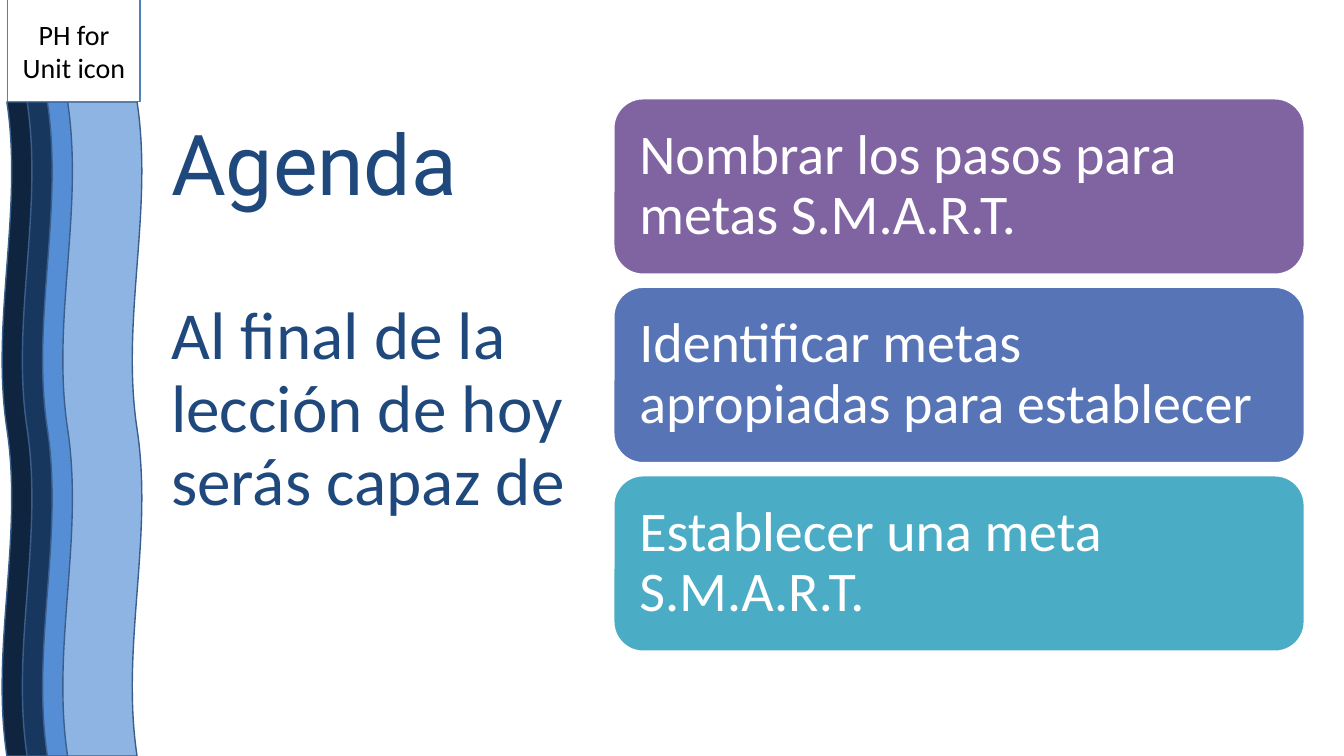
from pptx import Presentation
from pptx.dml.color import RGBColor
from pptx.enum.shapes import MSO_SHAPE as Preset
from pptx.enum.text import MSO_ANCHOR as Anchor, MSO_AUTO_SIZE as AutoSize, PP_ALIGN as Align
from pptx.util import Cm, Pt

TITLE = "Agenda"
SUBTITLE = "Al final de la lección de hoy serás capaz de"
ICON_LABEL = "PH for Unit icon"
GOALS = [
    ("Nombrar los pasos para metas S.M.A.R.T.", "purple"),
    ("Identificar metas apropiadas para establecer", "indigo"),
    ("Establecer una meta S.M.A.R.T.", "teal"),
]
WAVES = ["midnight", "navy", "sky", "pale"]
COLORS = {
    "midnight": "0F243E", "navy": "17375E", "sky": "558ED5", "pale": "8EB4E3",
    "wave_edge": "3A5F8C", "icon_edge": "4F81BD", "heading": "1F497D",
    "purple": "8064A2", "indigo": "5674B6", "teal": "4BACC6",
    "white": "FFFFFF", "black": "000000",
}

# Lengths in centimetres
WAVE_LENGTH, WAVE_WIDTH, WAVE_STEP = 16.48, 2.0, 0.51
WAVE_CENTER_X, WAVE_CENTER_Y = 1.05, 10.81
GOAL_LEFT, GOAL_TOP, GOAL_WIDTH, GOAL_HEIGHT = 15.47, 2.49, 17.4, 4.42
GOAL_STEP = 4.75
GOAL_INSET = 0.43


def color(name):
    return RGBColor.from_string(COLORS[name])


def add_box(page, preset, place, fill, edge, edge_width):
    box = page.shapes.add_shape(preset, *map(Cm, place))
    box.shadow.inherit = False
    if fill:
        box.fill.solid()
        box.fill.fore_color.rgb = color(fill)
    else:
        box.fill.background()
    box.line.color.rgb = color(edge)
    box.line.width = Pt(edge_width)
    return box


def write(para, text, font_name, size, ink, align=Align.LEFT, spacing=0.9):
    para.text = text
    para.alignment = align
    para.line_spacing = spacing
    font = para.font
    font.name, font.size = font_name, Pt(size)
    font.color.rgb = color(ink)


def add_sidebar(page):
    for index, fill in enumerate(WAVES):
        left = WAVE_CENTER_X + index * WAVE_STEP - WAVE_LENGTH / 2
        top = WAVE_CENTER_Y - WAVE_WIDTH / 2
        wave = add_box(page, Preset.DOUBLE_WAVE, (left, top, WAVE_LENGTH, WAVE_WIDTH),
                       fill, "wave_edge", 1)
        wave.rotation = 270

    icon = add_box(page, Preset.RECTANGLE, (0.2, 0, 3.33, 2.57), None, "icon_edge", 0.75)
    frame = icon.text_frame
    frame.word_wrap = True
    frame.vertical_anchor = Anchor.MIDDLE
    write(frame.paragraphs[0], ICON_LABEL, "Calibri", 20, "black", Align.CENTER, 1.0)


def fill_title(page):
    title = page.shapes.title
    title.left, title.top, title.width, title.height = map(Cm, (4.06, 2.97, 10.57, 14.05))
    frame = title.text_frame
    frame.word_wrap = True
    frame.auto_size = AutoSize.NONE
    frame.vertical_anchor = Anchor.TOP
    write(frame.paragraphs[0], TITLE, "Roboto", 60, "heading")
    subtitle = frame.add_paragraph()
    write(subtitle, SUBTITLE, "Calibri", 48, "heading")
    subtitle.space_before = Pt(63)


def add_goals(page):
    for index, (text, fill) in enumerate(GOALS):
        place = (GOAL_LEFT, GOAL_TOP + index * GOAL_STEP, GOAL_WIDTH, GOAL_HEIGHT)
        goal = add_box(page, Preset.ROUNDED_RECTANGLE, place, fill, "white", 1)
        frame = goal.text_frame
        frame.word_wrap = True
        frame.vertical_anchor = Anchor.MIDDLE
        frame.margin_left = frame.margin_right = Cm(GOAL_INSET)
        frame.margin_top = frame.margin_bottom = Cm(GOAL_INSET)
        write(frame.paragraphs[0], text, "Calibri", 40, "white")


def main():
    deck = Presentation()
    deck.slide_width, deck.slide_height = Cm(33.87), Cm(19.05)
    page = deck.slides.add_slide(deck.slide_layouts[5])
    add_sidebar(page)
    fill_title(page)
    add_goals(page)
    deck.save("out.pptx")


if __name__ == "__main__":
    main()
